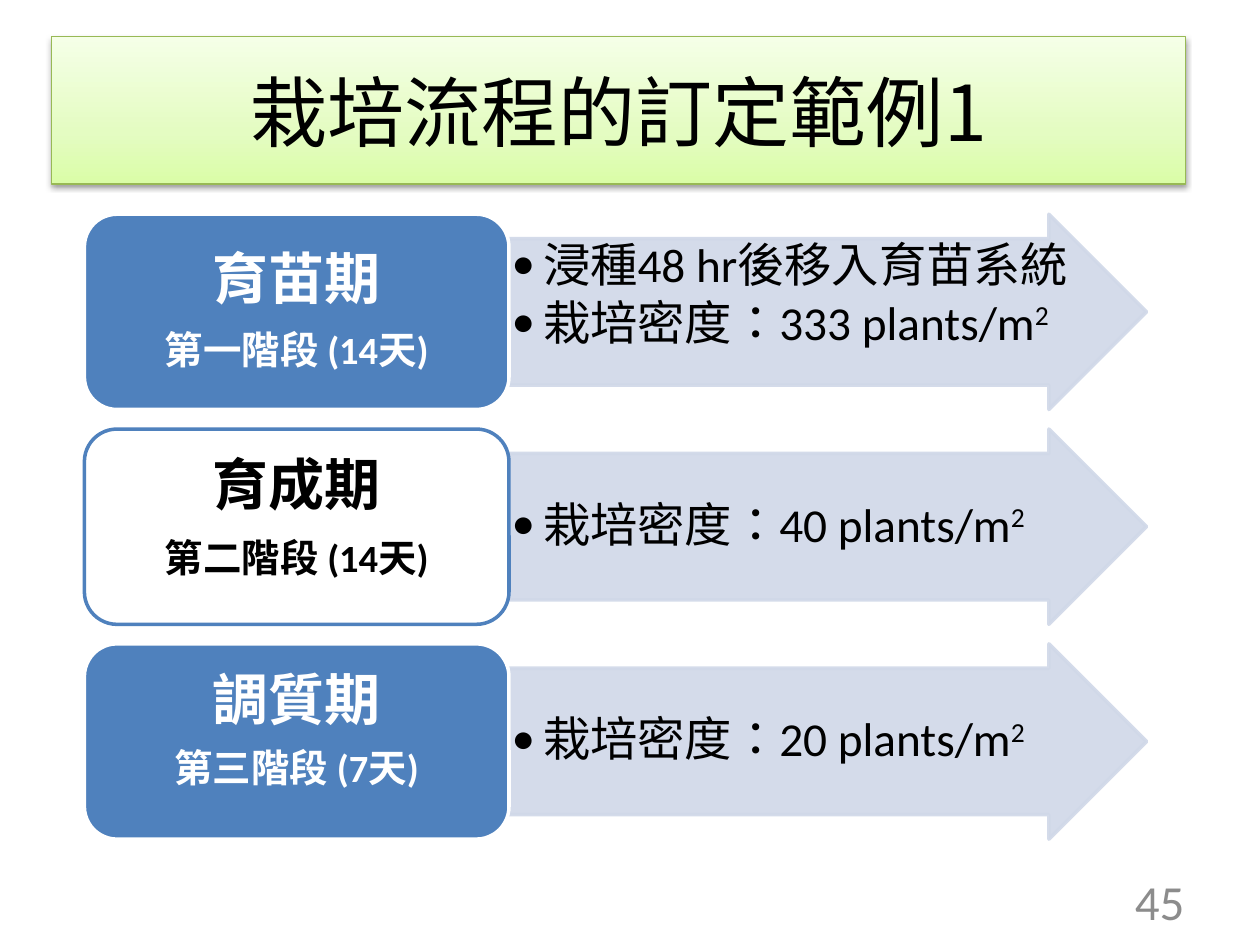
from lxml.etree import SubElement
from pptx import Presentation
from pptx.dml.color import RGBColor
from pptx.enum.shapes import MSO_SHAPE
from pptx.enum.text import MSO_ANCHOR, PP_ALIGN
from pptx.oxml.ns import qn
from pptx.util import Inches, Pt

BLACK = RGBColor(0x00, 0x00, 0x00)
WHITE = RGBColor(0xFF, 0xFF, 0xFF)
GRAY = RGBColor(0x8C, 0x8C, 0x8C)
BLUE = RGBColor(0x4F, 0x81, 0xBD)
PALE_BLUE = RGBColor(0xD0, 0xD8, 0xE8)
GREEN_EDGE = RGBColor(0x98, 0xB9, 0x55)
GREEN_STOPS = ((0, "DAFDA7"), (35, "E4FCC2"), (100, "F5FFE7"))

CJK_FONT = "Noto Sans CJK SC"
BODY_FONT = "Calibri"

FIRST_TOP, ROW_PITCH, ROW_HEIGHT = 1.7, 1.705, 1.55
STAGE_LEFT, STAGE_WIDTH = 0.67, 3.37
ARROW_LEFT, ARROW_WIDTH = STAGE_LEFT + STAGE_WIDTH, 5.06
SHAFT_SHARE = 0.75
DETAIL_WIDTH, DETAIL_HEIGHT = 4.47, ROW_HEIGHT * SHAFT_SHARE

# name, duration, line spacing, fill, line, text colour, anchor of details, details
STAGES = (
    ("育苗期", "第一階段 (14天)", 0.9, BLUE, WHITE, WHITE, MSO_ANCHOR.TOP,
     (("浸種48 hr後移入育苗系統", ""), ("栽培密度：333 plants/m", "2"))),
    ("育成期", "第二階段 (14天)", Pt(25), WHITE, BLUE, BLACK, MSO_ANCHOR.MIDDLE,
     (("栽培密度：40 plants/m", "2"),)),
    ("調質期", "第三階段 (7天)", Pt(22), BLUE, WHITE, WHITE, MSO_ANCHOR.MIDDLE,
     (("栽培密度：20 plants/m", "2"),)),
)


class SlideBuilder:
    def __init__(self, slide):
        self.slide = slide

    def shape(self, kind, left, top, width, height, line_color, line_width):
        shape = self.slide.shapes.add_shape(
            kind, Inches(left), Inches(top), Inches(width), Inches(height))
        shape.shadow.inherit = False
        shape.line.color.rgb = line_color
        shape.line.width = Pt(line_width)
        return shape

    def textbox(self, left, top, width, height):
        return self.slide.shapes.add_textbox(
            Inches(left), Inches(top), Inches(width), Inches(height))

    def frame(self, shape, anchor, inset_x=0.1, inset_y=0.05):
        frame = shape.text_frame
        frame.word_wrap = True
        frame.vertical_anchor = anchor
        frame.margin_left = frame.margin_right = Inches(inset_x)
        frame.margin_top = frame.margin_bottom = Inches(inset_y)
        return frame

    def paragraph(self, frame, index, align, spacing=None, after=0):
        paragraph = frame.add_paragraph() if index else frame.paragraphs[0]
        paragraph.alignment = align
        paragraph.line_spacing = spacing
        paragraph.space_after = Pt(after)
        return paragraph

    def run(self, paragraph, text, size, color, bold=False, font=BODY_FONT):
        """Add a run and return its properties element."""
        run = paragraph.add_run()
        run.text = text
        run.font.size = Pt(size)
        run.font.name = font
        run.font.bold = bold
        run.font.color.rgb = color
        properties = run.font._element
        properties.set("lang", "zh-TW")
        SubElement(properties, qn("a:ea"), typeface=CJK_FONT)
        return properties

    def title(self, text):
        banner = self.shape(MSO_SHAPE.RECTANGLE, 0.41, 0.29, 9, 1.17, GREEN_EDGE, 0.75)
        banner.fill.gradient()
        banner.fill.gradient_angle = 90
        stops = banner._element.spPr.find(".//" + qn("a:gsLst"))
        stops.clear()
        for percent, color in GREEN_STOPS:
            stop = SubElement(stops, qn("a:gs"), pos=str(percent * 1000))
            SubElement(stop, qn("a:srgbClr"), val=color)
        effects = banner._element.spPr.find(qn("a:effectLst"))
        shadow = SubElement(effects, qn("a:outerShdw"), blurRad=str(Pt(3.1)),
                            dist=str(Pt(1.6)), dir="5400000", rotWithShape="0")
        shade = SubElement(shadow, qn("a:srgbClr"), val="000000")
        SubElement(shade, qn("a:alpha"), val="38000")
        frame = self.frame(banner, MSO_ANCHOR.MIDDLE)
        self.run(self.paragraph(frame, 0, PP_ALIGN.CENTER), text, 44, BLACK, font=CJK_FONT)

    def page_number(self, number):
        frame = self.frame(self.textbox(7.17, 6.95, 2.33, 0.4), MSO_ANCHOR.MIDDLE)
        self.run(self.paragraph(frame, 0, PP_ALIGN.RIGHT), number, 28, GRAY)

    def arrow(self, top):
        arrow = self.shape(MSO_SHAPE.RIGHT_ARROW, ARROW_LEFT, top,
                           ARROW_WIDTH, ROW_HEIGHT, PALE_BLUE, 2)
        arrow.adjustments[0], arrow.adjustments[1] = SHAFT_SHARE, 0.5
        arrow.fill.solid()
        arrow.fill.fore_color.rgb = PALE_BLUE
        for color in arrow._element.spPr.iter(qn("a:srgbClr")):
            SubElement(color, qn("a:alpha"), val="90000")

    def details(self, top, details, anchor):
        """Write the bullets over the shaft of the arrow."""
        shaft_top = top + (ROW_HEIGHT - DETAIL_HEIGHT) / 2
        box = self.textbox(ARROW_LEFT, shaft_top, DETAIL_WIDTH, DETAIL_HEIGHT)
        frame = self.frame(box, anchor, 0.02, 0.02)
        for index, (text, exponent) in enumerate(details):
            paragraph = self.paragraph(frame, index, PP_ALIGN.LEFT, 0.9, 4)
            properties = paragraph._p.get_or_add_pPr()
            properties.set("marL", str(Inches(0.25)))
            properties.set("indent", str(-Inches(0.25)))
            SubElement(properties, qn("a:buFont"), typeface=BODY_FONT)
            SubElement(properties, qn("a:buChar"), char="•")
            self.run(paragraph, text, 27, BLACK)
            if exponent:
                self.run(paragraph, exponent, 27, BLACK).set("baseline", "30000")

    def stage_box(self, top, name, duration, spacing, fill, line, color):
        box = self.shape(MSO_SHAPE.ROUNDED_RECTANGLE, STAGE_LEFT, top,
                         STAGE_WIDTH, ROW_HEIGHT, line, 2)
        box.fill.solid()
        box.fill.fore_color.rgb = fill
        frame = self.frame(box, MSO_ANCHOR.MIDDLE, 0.13, 0.07)
        for index, (text, size) in enumerate(((name, 32), (duration, 22))):
            paragraph = self.paragraph(frame, index, PP_ALIGN.CENTER, spacing, size * 0.35)
            self.run(paragraph, text, size, color, bold=True)


def main():
    presentation = Presentation()
    presentation.slide_width, presentation.slide_height = Inches(10), Inches(7.5)
    builder = SlideBuilder(presentation.slides.add_slide(presentation.slide_layouts[6]))
    builder.title("栽培流程的訂定範例1")
    builder.page_number("45")
    for row, (name, duration, spacing, fill, line, color, anchor, details) in enumerate(STAGES):
        top = FIRST_TOP + row * ROW_PITCH
        builder.arrow(top)
        builder.details(top, details, anchor)
        builder.stage_box(top, name, duration, spacing, fill, line, color)
    presentation.save("out.pptx")


if __name__ == "__main__":
    main()
